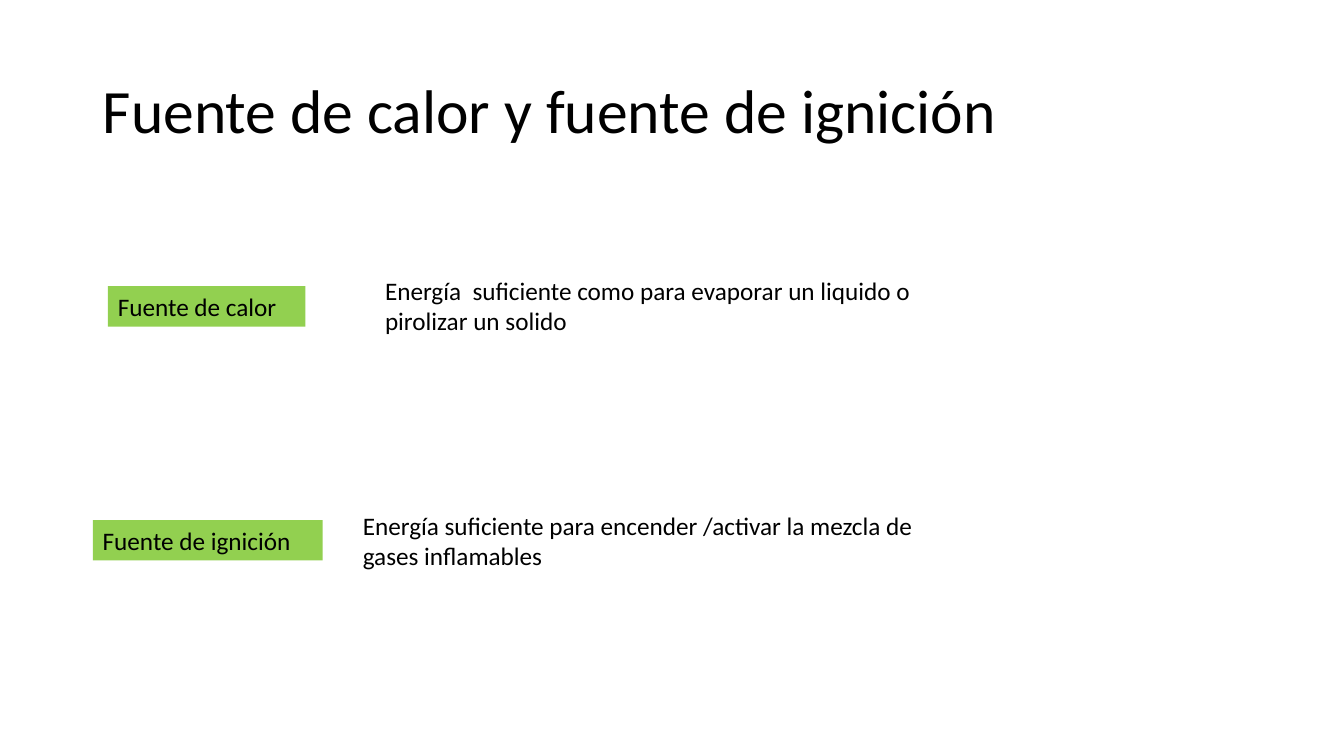
from pptx import Presentation
from pptx.dml.color import RGBColor
from pptx.enum import text
from pptx.util import Inches, Pt

BLACK = RGBColor(0x00, 0x00, 0x00)
GREEN = RGBColor(0x92, 0xD0, 0x50)
FONT = "Calibri"

# Each term and its definition: (left, top, width, height, wording)
SOURCES = [
    ((1.07, 2.84, 1.96, 0.4, "Fuente de calor"),
     (3.72, 2.68, 5.68, 0.71,
      "Energía  suficiente como para evaporar un liquido o pirolizar un solido")),
    ((0.92, 5.16, 2.28, 0.4, "Fuente de ignición"),
     (3.5, 5.01, 6.12, 0.71,
      "Energía suficiente para encender /activar la mezcla de gases inflamables")),
]


def add_text(paragraph, wording, size):
    paragraph.alignment = text.PP_ALIGN.LEFT
    run = paragraph.add_run()
    run.text = wording
    run.font.name = FONT
    run.font.size = Pt(size)
    run.font.color.rgb = BLACK


def set_title(slide, wording):
    title = slide.shapes.title
    title.left, title.top = Inches(0.92), Inches(0.4)
    title.width, title.height = Inches(11.5), Inches(1.45)
    title.text_frame.vertical_anchor = text.MSO_ANCHOR.MIDDLE
    paragraph = title.text_frame.paragraphs[0]
    paragraph.line_spacing = 0.9
    add_text(paragraph, wording, 44)


def add_box(slide, left, top, width, height, wording, fill=None):
    box = slide.shapes.add_textbox(
        Inches(left), Inches(top), Inches(width), Inches(height))
    if fill is not None:
        box.fill.solid()
        box.fill.fore_color.rgb = fill
    frame = box.text_frame
    frame.word_wrap = True
    frame.auto_size = text.MSO_AUTO_SIZE.SHAPE_TO_FIT_TEXT
    add_text(frame.paragraphs[0], wording, 18)


def main():
    presentation = Presentation()
    presentation.slide_width = Inches(13.33)
    presentation.slide_height = Inches(7.5)
    slide = presentation.slides.add_slide(presentation.slide_layouts[5])
    set_title(slide, "Fuente de calor y fuente de ignición")
    for term, definition in SOURCES:
        add_box(slide, *term, fill=GREEN)
        add_box(slide, *definition)
    presentation.save("out.pptx")


if __name__ == "__main__":
    main()
